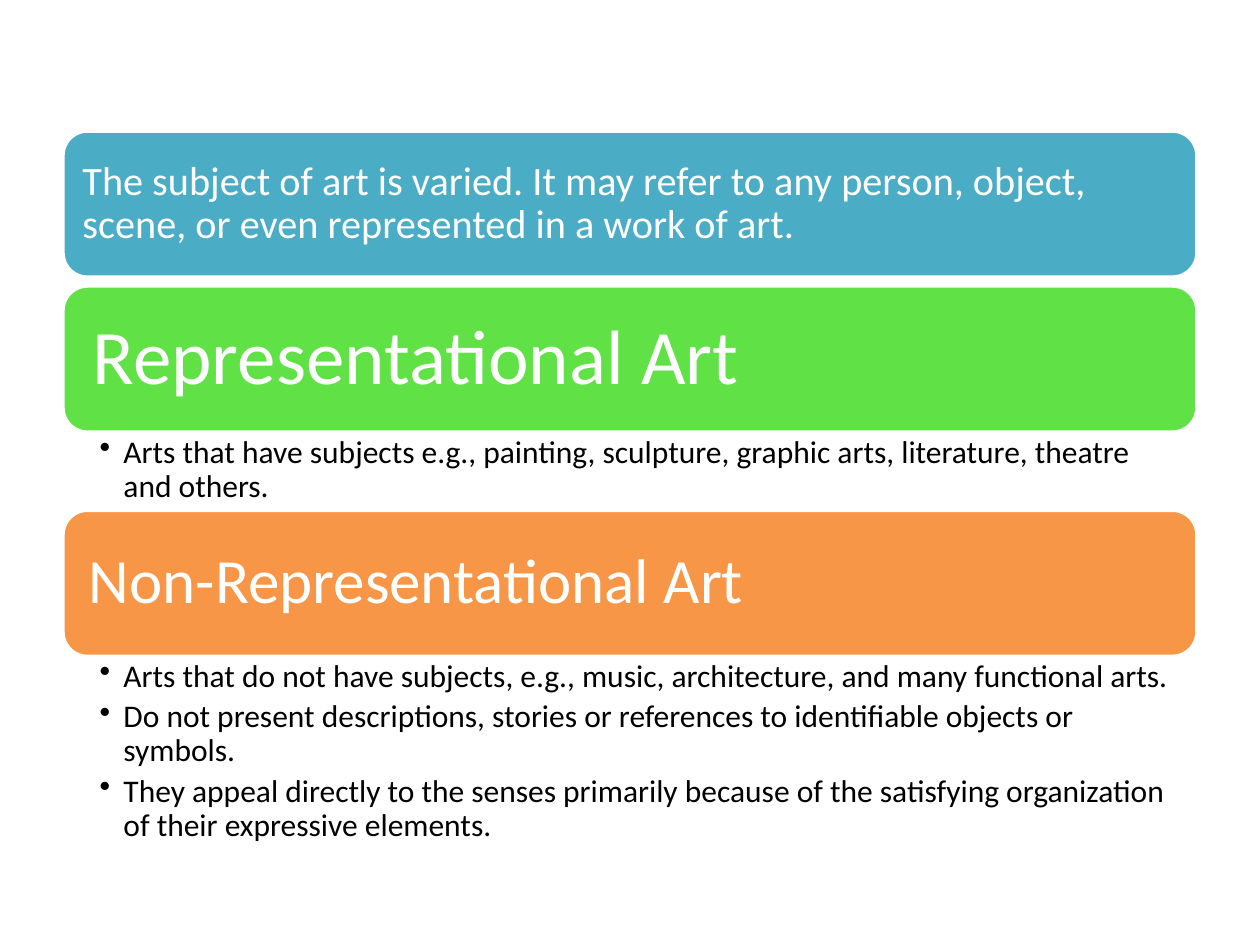
from lxml import etree
from pptx import Presentation
from pptx import util as u
from pptx.dml.color import RGBColor
from pptx.enum import shapes, text
from pptx.oxml import ns

WHITE = RGBColor(0xFF, 0xFF, 0xFF)
BLACK = RGBColor(0x00, 0x00, 0x00)
TEAL = RGBColor(0x4B, 0xAC, 0xC6)
GREEN = RGBColor(0x60, 0xE1, 0x46)
ORANGE = RGBColor(0xF7, 0x96, 0x46)

LEFT, WIDTH = 0.5, 9
TOP, BAND, GAP = 1.04, 1.16, 0.07

SECTIONS = [
    ("The subject of art is varied. It may refer to any person, object, scene, "
     "or even represented in a work of art.", TEAL, 23, 0.1, GAP, []),
    ("Representational Art", GREEN, 44, 0.18, 0.62, [
        "Arts that have subjects e.g., painting, sculpture, graphic arts, "
        "literature, theatre and others."]),
    ("Non-Representational Art", ORANGE, 36, 0.15, 1.56, [
        "Arts that do not have subjects, e.g., music, architecture, and many "
        "functional arts.",
        "Do not present descriptions, stories or references to identifiable "
        "objects or symbols.",
        "They appeal directly to the senses primarily because of the satisfying "
        "organization of their expressive elements."]),
]


def apply(target, formats):
    for name, value in formats.items():
        setattr(target, name, value)


def inches(box):
    return [u.Inches(length) for length in box]


def set_frame(frame, anchor, insets):
    sides = ("margin_left", "margin_top", "margin_right", "margin_bottom")
    apply(frame, {"word_wrap": True, "vertical_anchor": anchor,
                  **dict(zip(sides, inches(insets)))})


def write(paragraph, words, size, color, **formats):
    paragraph.text = words
    apply(paragraph, {"line_spacing": 0.9, **formats})
    apply(paragraph.font, {"name": "Calibri", "size": u.Pt(size)})
    paragraph.font.color.rgb = color


def add_band(slide, box, heading, fill, size, inset):
    band = slide.shapes.add_shape(shapes.MSO_SHAPE.ROUNDED_RECTANGLE, *inches(box))
    band.shadow.inherit = False
    band.fill.solid()
    band.fill.fore_color.rgb = fill
    band.line.color.rgb = WHITE
    band.line.width = u.Pt(2)
    set_frame(band.text_frame, text.MSO_ANCHOR.MIDDLE, [inset] * 4)
    write(band.text_frame.paragraphs[0], heading, size, WHITE,
          alignment=text.PP_ALIGN.LEFT)


def add_points(slide, box, points):
    frame = slide.shapes.add_textbox(*inches(box)).text_frame
    set_frame(frame, text.MSO_ANCHOR.TOP, (0.29, 0.03, 0.18, 0.03))
    for index, point in enumerate(points):
        paragraph = frame.add_paragraph() if index else frame.paragraphs[0]
        paragraph.level = 1
        properties = paragraph._p.get_or_add_pPr()
        properties.set("marL", str(u.Inches(0.19)))
        properties.set("indent", str(u.Inches(-0.19)))
        etree.SubElement(properties, ns.qn("a:buChar"), char="•")
        write(paragraph, point, 18, BLACK, space_after=u.Pt(3.6))


def main():
    deck = Presentation()
    apply(deck, {"slide_width": u.Inches(10), "slide_height": u.Inches(7.5)})
    slide = deck.slides.add_slide(deck.slide_layouts[6])
    top = TOP
    for heading, fill, size, inset, below, points in SECTIONS:
        add_band(slide, (LEFT, top, WIDTH, BAND), heading, fill, size, inset)
        top += BAND
        if points:
            add_points(slide, (LEFT, top, WIDTH, below), points)
        top += below
    deck.save("out.pptx")


if __name__ == "__main__":
    main()
